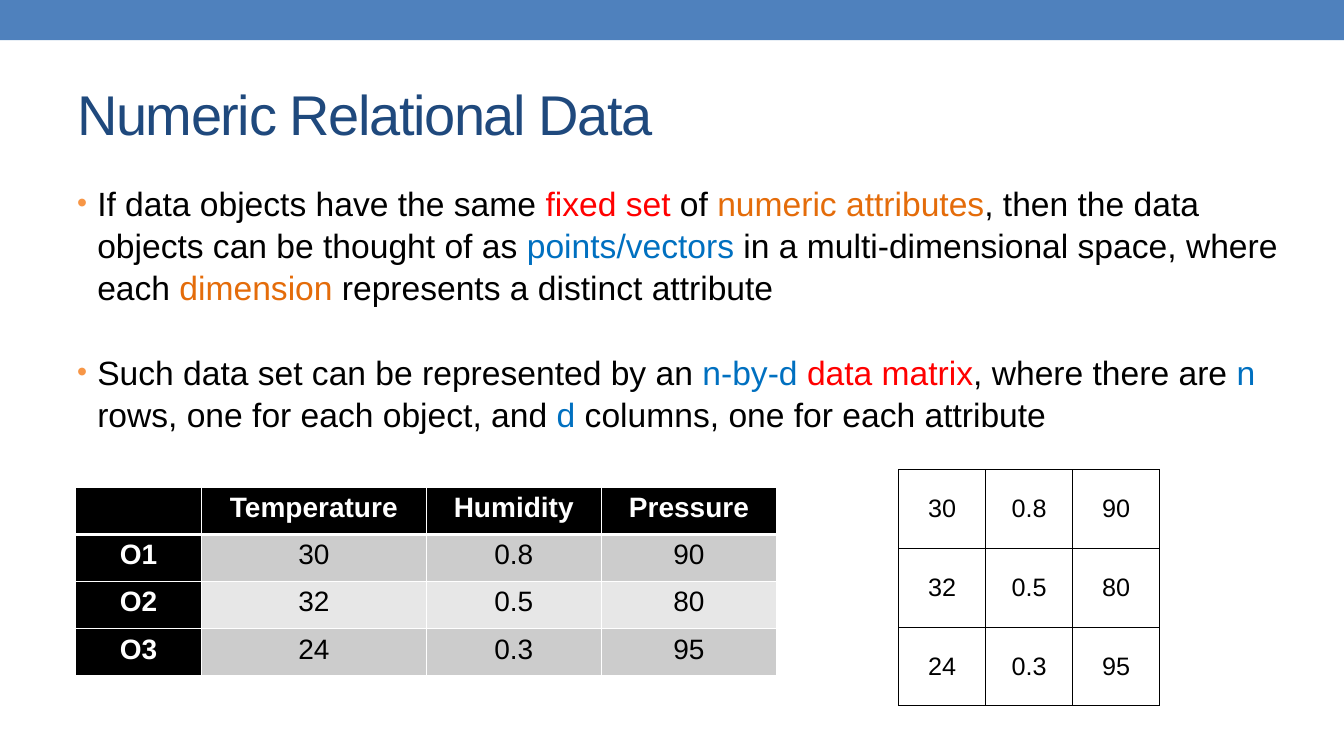
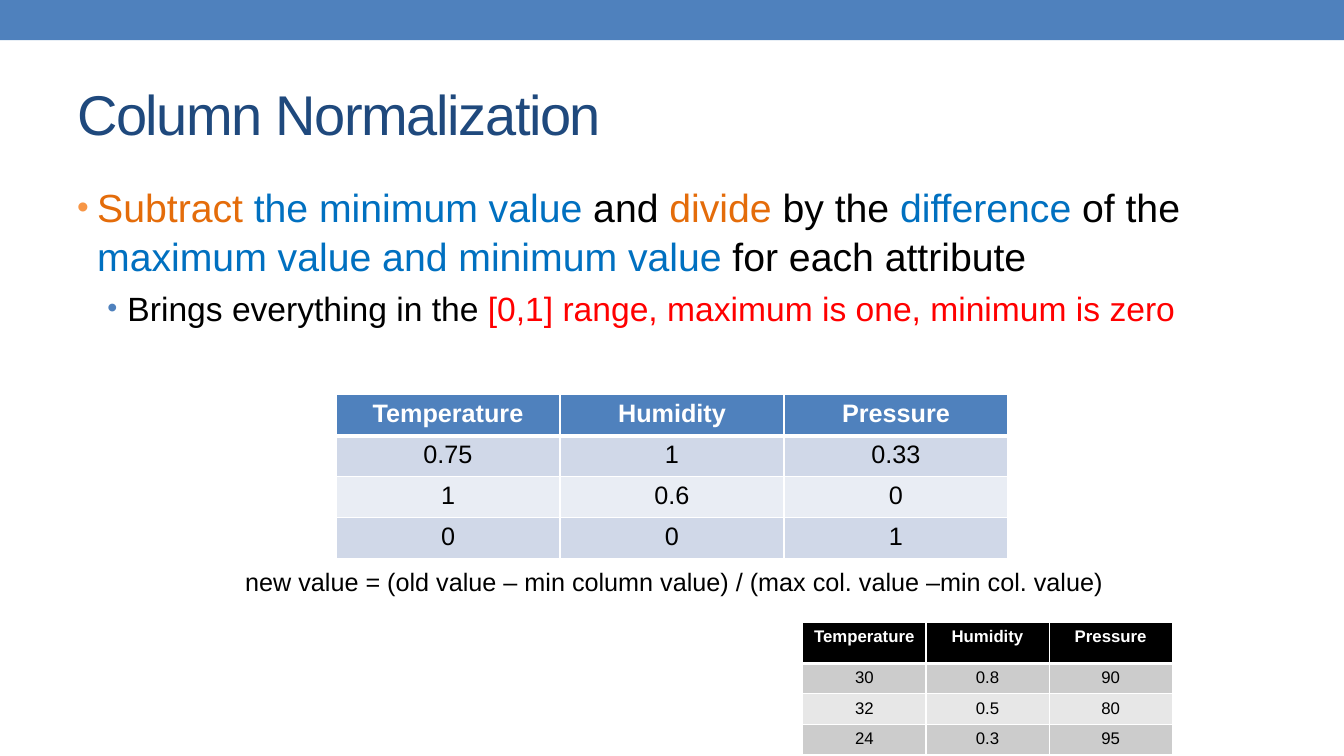
from dataclasses import dataclass

from lxml import etree
from pptx import Presentation
from pptx.dml.color import RGBColor
from pptx.enum import shapes, text
from pptx.oxml import ns
from pptx.util import Pt


@dataclass(frozen=True)
class Theme:
    font: str = "Arial"
    # Colours
    black: str = "000000"
    white: str = "FFFFFF"
    band: str = "4F81BD"
    title: str = "1F497D"
    red: str = "FF0000"
    orange: str = "E46C0A"
    blue: str = "0070C0"
    bullets: tuple = ("F79646", "4F81BD")
    gray_rows: tuple = ("CCCCCC", "E7E7E7")
    blue_rows: tuple = ("D0D8E8", "E9EDF4")
    # Type sizes
    title_size: int = 40
    lead_size: int = 28
    body_size: int = 24
    table_size: int = 20
    note_size: int = 18
    small_size: int = 12


T = Theme()
SLIDE_W, SLIDE_H = 960, 540
ATTRIBUTES = ["Temperature", "Humidity", "Pressure"]
READINGS = [["30", "0.8", "90"], ["32", "0.5", "80"], ["24", "0.3", "95"]]
NORMALIZED = [["0.75", "1", "0.33"], ["1", "0.6", "0"], ["0", "0", "1"]]


def add_run(p, content, *, size, color=T.black, bold=False, spacing=None):
    """Append formatted text to a paragraph."""
    r = p.add_run()
    r.text = content
    r.font.name, r.font.size, r.font.bold = T.font, Pt(size), bold
    r.font.color.rgb = RGBColor.from_string(color)
    if spacing is not None:
        r.font._element.set("spc", str(spacing * 100))


def add_box(s, box, *, wrap=True, anchor=text.MSO_ANCHOR.TOP):
    tf = s.shapes.add_textbox(*map(Pt, box)).text_frame
    tf.word_wrap = wrap
    tf.vertical_anchor = anchor
    return tf


def set_bullet(p, level):
    """Hang a coloured bullet in front of the paragraph."""
    pPr = p._p.get_or_add_pPr()
    pPr.set("marL", str(Pt(14.4 + 21.6 * level)))
    pPr.set("indent", str(Pt(-14.4)))
    color = etree.SubElement(pPr, ns.qn("a:buClr"))
    etree.SubElement(color, ns.qn("a:srgbClr"), val=T.bullets[level])
    etree.SubElement(pPr, ns.qn("a:buSzPct"), val="85000")
    etree.SubElement(pPr, ns.qn("a:buFont"), typeface=T.font)
    etree.SubElement(pPr, ns.qn("a:buChar"), char="•")


def add_bullets(s, box, items):
    """Each item is (level, size, space before, [(text, colour), ...])."""
    tf = add_box(s, box)
    for i, (level, size, before, runs) in enumerate(items):
        p = tf.add_paragraph() if i else tf.paragraphs[0]
        p.line_spacing, p.space_before = 1.04, Pt(before)
        set_bullet(p, level)
        for content, color in runs:
            add_run(p, content, size=size, color=color)


def set_borders(cell, color, bottom):
    tcPr = cell._tc.get_or_add_tcPr()
    for i, (side, width) in enumerate(zip("LRTB", (1, 1, 1, bottom))):
        ln = etree.Element(ns.qn(f"a:ln{side}"), w=str(Pt(width)))
        fill = etree.SubElement(ln, ns.qn("a:solidFill"))
        etree.SubElement(fill, ns.qn("a:srgbClr"), val=color)
        tcPr.insert(i, ln)


def add_grid(s, left, top, cols, heights, rows, *, size, head=None, bands=None,
             labels=False, border=T.white, anchor=text.MSO_ANCHOR.TOP):
    """Table whose head row and label column take the head colour."""
    box = map(Pt, (left, top, sum(cols), sum(heights)))
    tbl = s.shapes.add_table(len(rows), len(cols), *box).table
    tbl.first_row = tbl.horz_banding = False
    for col, width in zip(tbl.columns, cols):
        col.width = Pt(width)
    for i, (row, height) in enumerate(zip(rows, heights)):
        tbl.rows[i].height = Pt(height)
        for j, content in enumerate(row):
            cell = tbl.cell(i, j)
            cell.vertical_anchor = anchor
            in_head = bool(head) and (i == 0 or (labels and j == 0))
            if head:
                cell.fill.solid()
                color = head if in_head else bands[(i - 1) % 2]
                cell.fill.fore_color.rgb = RGBColor.from_string(color)
            else:
                cell.fill.background()
            set_borders(cell, border, 3 if head and i == 0 else 1)
            p = cell.text_frame.paragraphs[0]
            p.alignment = text.PP_ALIGN.CENTER
            if content:
                add_run(p, content, size=size, bold=in_head,
                        color=T.white if in_head else T.black)


def add_base(prs, title):
    """Blank slide with the top band and the title."""
    s = prs.slides.add_slide(prs.slide_layouts[6])
    sp = s.shapes.add_shape(shapes.MSO_SHAPE.RECTANGLE, 0, 0, Pt(SLIDE_W), Pt(28.8))
    sp.shadow.inherit = False
    sp.fill.solid()
    sp.fill.fore_color.rgb = RGBColor.from_string(T.band)
    sp.line.fill.background()
    tf = add_box(s, (48, 42, 864, 78), anchor=text.MSO_ANCHOR.MIDDLE)
    add_run(tf.paragraphs[0], title, size=T.title_size, color=T.title, spacing=-1)
    return s


def add_relational_slide(prs):
    s = add_base(prs, "Numeric Relational Data")
    add_bullets(s, (48, 126, 876, 246), [
        (0, T.body_size, 2, [
            ("If data objects have the same ", T.black),
            ("fixed set ", T.red),
            ("of ", T.black),
            ("numeric attributes", T.orange),
            (", then the data objects can be thought of as ", T.black),
            ("points/vectors", T.blue),
            (" in a multi-dimensional space, where each ", T.black),
            ("dimension", T.orange),
            (" represents a distinct attribute", T.black)]),
        (0, T.body_size, 30.6, [
            ("Such data set can be represented by an ", T.black),
            ("n-by-d ", T.blue),
            ("data matrix", T.red),
            (", where there are ", T.black),
            ("n", T.blue),
            (" rows, one for each object, and ", T.black),
            ("d", T.blue),
            (" columns, one for each attribute", T.black)])])
    # Labelled table
    rows = [["", *ATTRIBUTES]]
    rows += [[f"O{n}", *values] for n, values in enumerate(READINGS, 1)]
    add_grid(s, 54, 348, [90, 160.4, 125.2, 125.2], [33.7] * 4, rows,
             size=T.table_size, head=T.black, bands=T.gray_rows, labels=True)
    # Plain data matrix
    add_grid(s, 642, 335.6, [62.1] * 3, [56.2] * 3, READINGS, size=T.note_size,
             border=T.black, anchor=text.MSO_ANCHOR.MIDDLE)


def add_normalization_slide(prs):
    s = add_base(prs, "Column Normalization")
    add_bullets(s, (48, 126, 864, 384), [
        (0, T.lead_size, 2, [
            ("Subtract", T.orange),
            (" the minimum value ", T.blue),
            ("and ", T.black),
            ("divide", T.orange),
            (" by the ", T.black),
            ("difference", T.blue),
            (" of the ", T.black),
            ("maximum value and minimum value ", T.blue),
            ("for each attribute", T.black)]),
        (1, T.body_size, 5, [
            ("Brings everything in the ", T.black),
            ("[0,1] range, maximum is one, minimum is zero", T.red)])])
    # Normalized values
    add_grid(s, 240, 282, [160] * 3, [29.2] * 4, [ATTRIBUTES, *NORMALIZED],
             size=T.note_size, head=T.band, bands=T.blue_rows)
    # Formula
    tf = add_box(s, (168, 401, 652, 29), wrap=False)
    add_run(tf.paragraphs[0], "new value = (old value – min column value) / "
            "(max col. value –min col. value)", size=T.note_size)
    # Source values
    add_grid(s, 573.4, 444.5, [88] * 3, [29.5] + [21.4] * 3, [ATTRIBUTES, *READINGS],
             size=T.small_size, head=T.black, bands=T.gray_rows)


def main():
    prs = Presentation()
    prs.slide_width, prs.slide_height = Pt(SLIDE_W), Pt(SLIDE_H)
    add_relational_slide(prs)
    add_normalization_slide(prs)
    prs.save("out.pptx")


if __name__ == "__main__":
    main()
